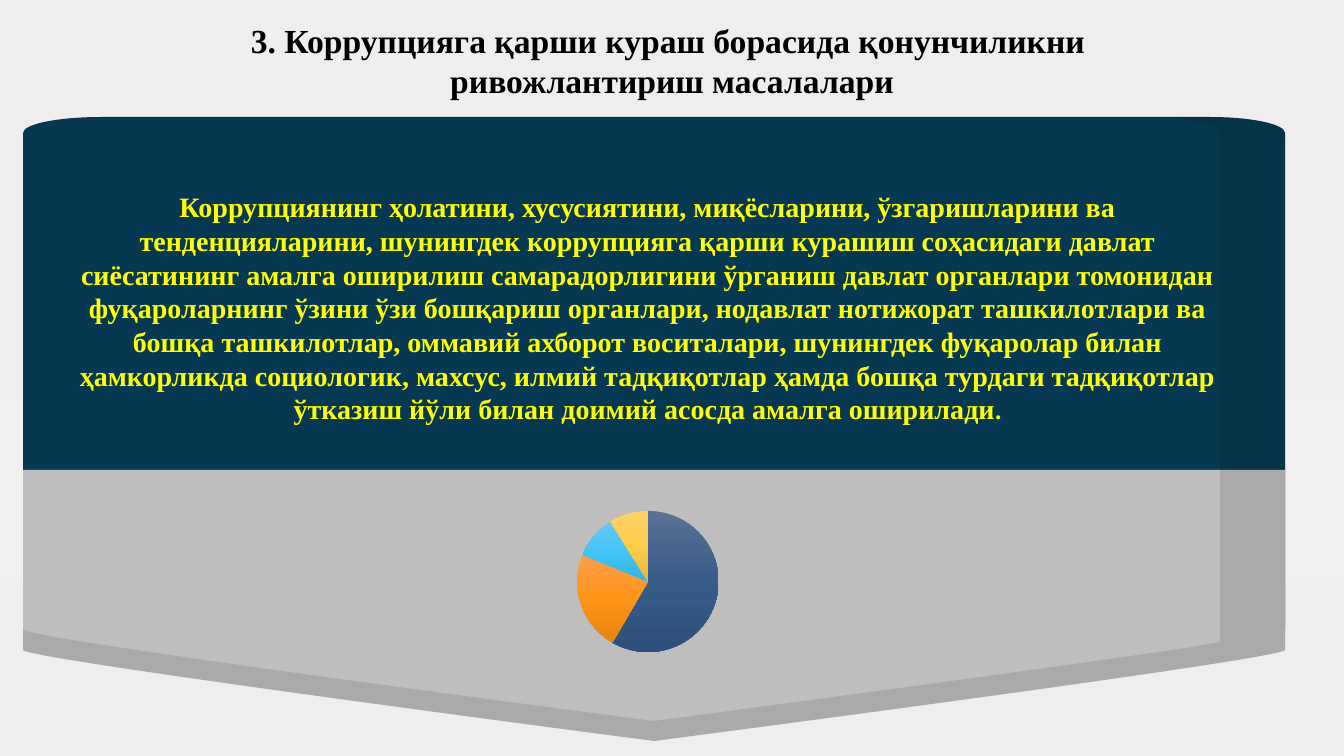
"""Build the slide on developing anti-corruption legislation."""
from lxml import etree
from pptx import Presentation
from pptx.chart.data import CategoryChartData
from pptx.dml.color import RGBColor
from pptx.enum import chart as ch, text
from pptx.oxml.ns import qn
from pptx.util import Pt

PX = 9071
rgb = RGBColor.from_string

prs = Presentation()
prs.slide_width, prs.slide_height = 1344 * PX, 756 * PX
s = prs.slides.add_slide(prs.slide_layouts[6])


def outline(color, start, *steps):
    """Draw a closed outline from line ends (x, y) and Bezier steps of six numbers."""
    builder = s.shapes.build_freeform(*start, scale=PX)
    for step in steps:
        builder.add_line_segments(list(zip(step[::2], step[1::2])), close=False)
    builder.add_line_segments([], close=True)
    sp = builder.convert_to_shape()
    lines = sp._element.iter(qn("a:lnTo"))
    lines = iter(list(lines))
    for step in steps:
        parts = [next(lines) for _ in step[::2]]
        if len(parts) == 3:
            curve = etree.Element(qn("a:cubicBezTo"))
            parts[0].addprevious(curve)
            for part in parts:
                curve.append(part[0])
                part.getparent().remove(part)
    sp.shadow.inherit = False
    sp.fill.solid()
    sp.fill.fore_color.rgb = rgb(color)
    sp.line.fill.background()
    return sp


def gradient(fill, root, stops):
    """Give the newest fill under root a vertical gradient with (percent, colour) stops."""
    fill.gradient()
    fill.gradient_angle = 270
    gs_list = list(root.iter(qn("a:gsLst")))[-1]
    gs_list.clear()
    for pos, color in stops:
        gs = etree.SubElement(gs_list, qn("a:gs"), pos=str(pos * 1000))
        etree.SubElement(gs, qn("a:srgbClr"), val=color)


gradient(s.background.fill, s._element,
         [(0, "EFEDEE"), (53, "F1EFF0"), (77, "EFEDEE"), (100, "EFEBEC")])

LEFT, MID, RIGHT, TOP, INNER = 23, 654, 1285, 117, 1220
top_right = (1251, TOP, RIGHT, 124, RIGHT, 133)
bottom = [(RIGHT, 650), (RIGHT, 659, MID, 741, MID, 741),
          (MID, 741, LEFT, 659, LEFT, 650)]

outline("063951", (RIGHT, 630),
        (RIGHT, 639, MID, 721, MID, 721), (MID, 721, LEFT, 639, LEFT, 630),
        (LEFT, 133), (LEFT, 124, 58, TOP, 101, TOP), (1210, TOP), top_right)
outline("BEBEBE", (LEFT, 470), (RIGHT, 470), *bottom)
shade = outline("000000", (101, TOP), (1210, TOP), top_right, *bottom,
                (LEFT, 630), (30, 632), (100, 649, MID, 721, MID, 721),
                (MID, 721, 1009, 674, 1186, 648), (INNER, 642), (INNER, 133),
                (INNER, 124, 1187, TOP, 1145, TOP))
shade_color = next(shade._element.spPr.iter(qn("a:srgbClr")))
etree.SubElement(shade_color, qn("a:alpha"), val="10000")

data = CategoryChartData()
data.categories = ["1", "2", "3", "4"]
data.add_series("Series 1", (59, 23, 10, 9))
chart = s.shapes.add_chart(ch.XL_CHART_TYPE.PIE, 521 * PX, 497 * PX,
                           254 * PX, 169 * PX, data).chart
chart.has_legend = False
chart.has_title = False
chart.font.name, chart.font.size = "Calibri", Pt(10)
chart.font.color.rgb = rgb("000000")
chart.plots[0].vary_by_categories = True
pie = chart.plots[0].series[0]
slices = [("5A7193", "365C88", "2D517C"), ("FB9F50", "FF9417", "E58312"),
          ("67C8F3", "44C5F7", "33B3E5"), ("FFD169", "FFCC4C", "E5B641")]
for i, colors in enumerate(slices):
    fmt = pie.points[i].format
    gradient(fmt.fill, pie._element, zip((0, 50, 100), colors))
    fmt.line.fill.background()

title = ["3. Коррупцияга қарши кураш борасида қонунчиликни ",
         "ривожлантириш масалалари"]
body = ["Коррупциянинг ҳолатини, хусусиятини, миқёсларини, ўзгаришларини ва "
        "тенденцияларини, шунингдек коррупцияга қарши курашиш соҳасидаги давлат "
        "сиёсатининг амалга оширилиш самарадорлигини ўрганиш давлат органлари томонидан "
        "фуқароларнинг ўзини ўзи бошқариш органлари, нодавлат нотижорат ташкилотлари ва "
        "бошқа ташкилотлар, оммавий ахборот воситалари, шунингдек фуқаролар билан "
        "ҳамкорликда социологик, махсус, илмий тадқиқотлар ҳамда бошқа турдаги тадқиқотлар "
        "ўтказиш йўли билан доимий асосда амалга оширилади"]
boxes = []
for box, lines, size, color in [((0, 15, 1344, 92), title, 24, "000000"),
                                ((69, 185, 1157, 248), body, 20, "FFFF00")]:
    tf = s.shapes.add_textbox(*(v * PX for v in box)).text_frame
    tf.word_wrap = True
    tf.auto_size = text.MSO_AUTO_SIZE.SHAPE_TO_FIT_TEXT
    tf.text = "\n".join(lines)
    if lines is body:
        tf.paragraphs[0].add_run().text = "."
    for p in tf.paragraphs:
        p.alignment = text.PP_ALIGN.CENTER
        for r in p.runs:
            r.font.name, r.font.bold = "Times New Roman", True
            r.font.size = Pt(18 if r.text == "." else size)
            r.font.color.rgb = rgb(color)

prs.save("out.pptx")
